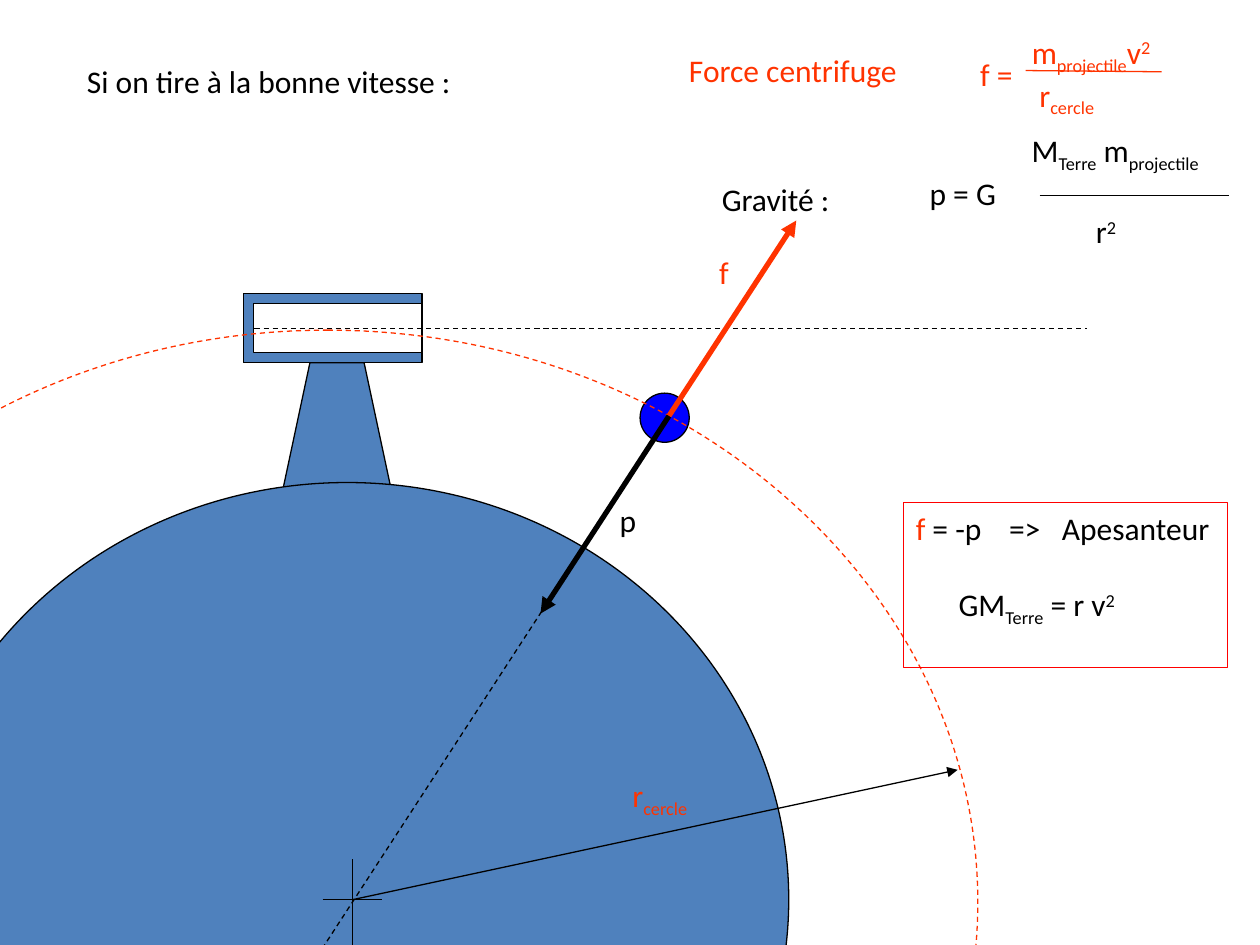
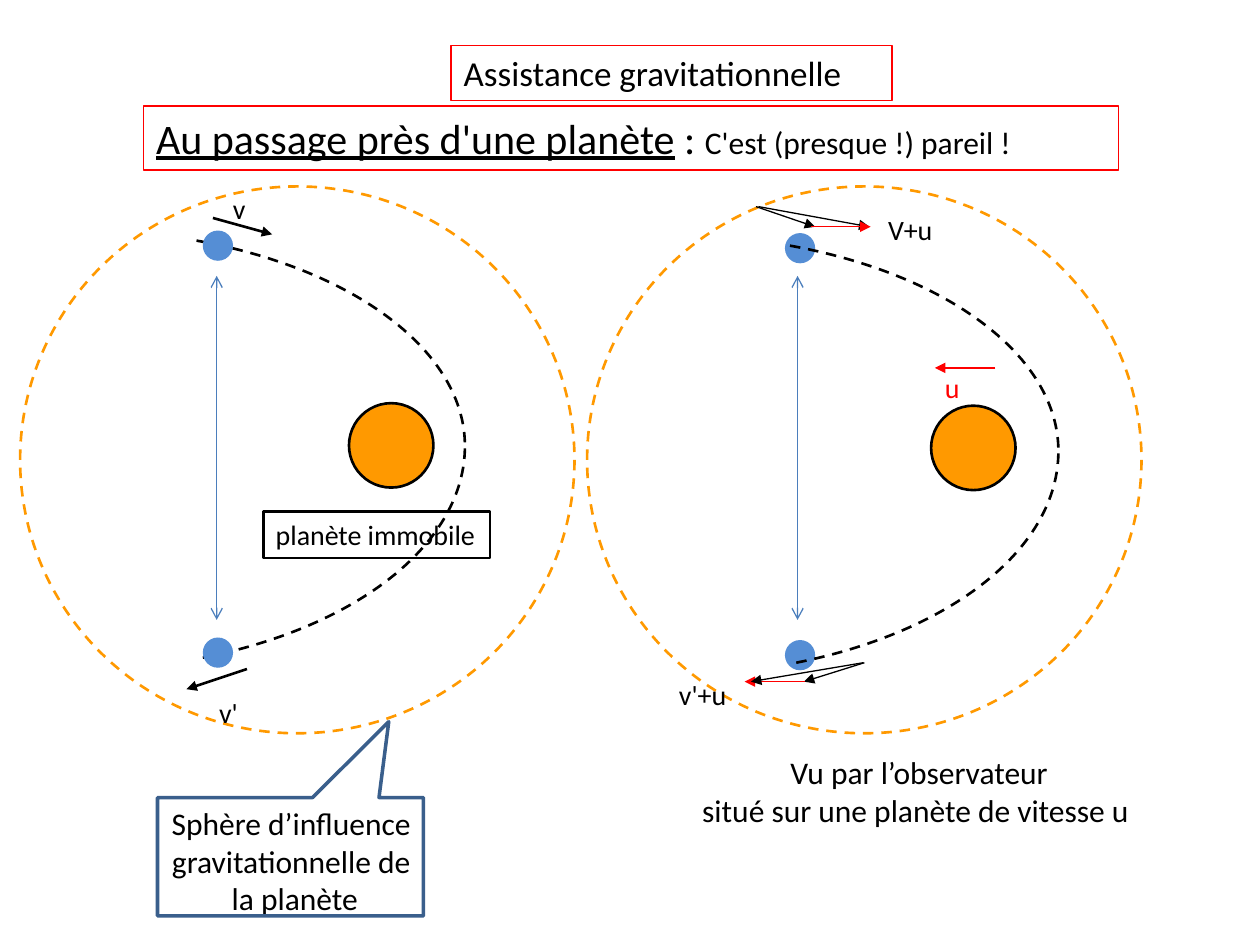
from dataclasses import dataclass

from lxml import etree
from pptx import Presentation
from pptx import util as u
from pptx.dml.color import RGBColor
from pptx.enum import dml, shapes, text
from pptx.oxml.ns import qn


@dataclass(frozen=True)
class Theme:
    font: str = "Calibri"
    black: str = "000000"
    white: str = "FFFFFF"
    earth: str = "4F81BD"
    ball: str = "0000FF"
    force: str = "FF3300"
    red: str = "FF0000"
    orange: str = "FF9900"
    probe: str = "558ED5"
    span: str = "4B7EBC"
    callout: str = "3A5F8C"
    heading: int = 24
    title: int = 20
    body: int = 18
    label: int = 16
    thin: float = 0.75
    medium: float = 1.5
    thick: float = 3


THEME = Theme()
SLIDE_SIZE = (10, 7.5)
BLANK_LINE = 22  # points of space that separate two formula lines
QUARTER = 0.55  # share of the tangent that makes a Bezier quarter ellipse


@dataclass
class Line:
    """A paragraph; each run is a string or a (string, style) pair."""
    runs: list
    indent: float = 0
    before: float = 0
    tabs: tuple = ()


def sub(string):
    return string, {"baseline": -25}


def sup(string):
    return string, {"baseline": 30}


# ---- Slide 1: content, lengths in inches ----
ORBIT_TITLE = "Si on tire à la bonne vitesse :"
CENTRE = (2.8, 7.14)
PROJECTILE = (5.31, 3.3)
ORBIT = (-2.56, 2.62, 10.32, 9.08)
PEDESTAL = [(2.24, 3.91), (2.46, 2.88), (2.89, 2.88), (3.11, 3.91)]

# box, lines, colour
ORBIT_TEXTS = [
    ((5.31, 0.36, 2.08, 0.4), [Line(["Force centrifuge"], indent=0.06)],
     THEME.force),
    ((7.68, 0.39, 0.49, 0.4), [Line(["f ="])], THEME.force),
    ((8.09, 0.21, 1.25, 0.71),
     [Line(["m", sub("projectile"), "v", sup("2")]),
      Line(["r", sub("cercle")], indent=0.06)], THEME.force),
    ((5.63, 1.38, 1.11, 0.37), [Line(["Gravité :"])], THEME.black),
    ((7.28, 1.33, 0.76, 0.37), [Line(["p = G"])], THEME.black),
    ((8.09, 0.99, 1.67, 1.01),
     [Line(["M", sub("Terre"), " m", sub("projectile")]),
      Line(["r", sup("2")], indent=0.51, before=BLANK_LINE)], THEME.black),
    ((4.92, 6.11, 0.69, 0.4), [Line(["r", sub("cercle")])], THEME.force),
    ((5.61, 1.96, 0.27, 0.4), [Line(["f"])], THEME.force),
    ((4.82, 3.93, 0.34, 0.4), [Line(["p"])], THEME.black),
]
WEIGHTLESS_BOX = (7.17, 3.99, 2.57, 1.31)
WEIGHTLESS = [
    Line([("f ", {"color": THEME.force}), "= -p\t=>\tApesanteur"],
         tabs=(0.74, 1.16)),
    Line(["GM", sub("Terre"), " = r v", sup("2")],
         indent=0.34, before=BLANK_LINE),
]
# start, end, colour, width, options
ORBIT_LINES = [
    ((2.4, 7.77), PROJECTILE, THEME.black, THEME.thin, {"dash": True}),
    (PROJECTILE, (4.29, 4.87), THEME.black, THEME.thick, {"tail": "triangle"}),
    (PROJECTILE, (6.32, 1.75), THEME.force, THEME.thick, {"tail": "triangle"}),
    ((2.56, 7.14), (3.03, 7.14), THEME.black, THEME.thin, {}),
    ((2.8, 7.5), (2.8, 6.82), THEME.black, THEME.thin, {}),
    ((8.14, 0.56), (9.22, 0.57), THEME.force, THEME.thin, {}),
    ((8.25, 1.55), (9.75, 1.55), THEME.black, THEME.thin, {}),
    (CENTRE, (7.6, 6.11), THEME.black, THEME.thin, {"tail": "triangle"}),
]

# ---- Slide 2: content ----
ASSIST_TITLE = "Assistance gravitationnelle"
ASSIST_HEADING = Line([
    ("Au passage près d'une planète", {"underline": True}), " : ",
    ("C'est (presque !) pareil !", {"size": THEME.body})])
OBSERVER = [Line(["Vu par l’observateur"]),
            Line(["situé sur une planète de vitesse u "])]
SPHERE_NOTE = [Line(["Sphère d’influence "]), Line(["gravitationnelle de "]),
               Line(["la planète"])]
PANELS = [
    {"sphere": (0.16, 1.48), "probe": (1.61, 1.83), "curve": (0.61, 3.54),
     "span": 1.72, "curve_on_top": False},
    {"sphere": (4.66, 1.48), "probe": (6.23, 1.85), "curve": (5.32, 3.58),
     "span": 6.33, "curve_on_top": True},
]
# Bezier points of the two halves of a flyby, from the centre of its curve
FLYBY_HALVES = [
    [(0.95, -1.63), (2.22, -1.4), (3.08, -0.74), (3.08, 0)],
    [(1, 1.68), (2.25, 1.43), (3.08, 0.76), (3.08, 0)],
]
SPEED_LABELS = [
    ((1.75, 1.47, 0.31, 0.37), "v", THEME.black),
    ((1.64, 5.47, 0.35, 0.37), "v'", THEME.black),
    ((6.95, 1.64, 0.56, 0.37), "V+u", THEME.black),
    ((5.29, 5.33, 0.58, 0.37), "v'+u", THEME.black),
    ((7.4, 2.89, 0.32, 0.37), "u", THEME.red),
]
SPEED_ARROWS = [
    ((1.96, 5.31), (1.48, 5.47), THEME.black, THEME.medium),
    ((1.69, 1.73), (2.16, 1.86), THEME.black, THEME.medium),
    ((6, 1.64), (6.47, 1.8), THEME.black, THEME.thin),
    ((6.02, 1.64), (6.9, 1.8), THEME.black, THEME.thin),
    ((6.44, 1.8), (6.91, 1.8), THEME.red, THEME.thin),
    ((6.86, 5.26), (6.38, 5.41), THEME.black, THEME.thin),
    ((6.39, 5.41), (5.91, 5.41), THEME.red, THEME.thin),
    ((6.85, 5.26), (5.96, 5.41), THEME.black, THEME.thin),
    ((7.9, 2.92), (7.42, 2.92), THEME.red, THEME.thin),
]


# ---- Drawing helpers ----
def inches(values):
    return [u.Inches(value) for value in values]


def style_outline(line, color, width, dash=False):
    line.color.rgb = RGBColor.from_string(color)
    line.width = u.Pt(width)
    if dash:
        line.dash_style = dml.MSO_LINE.DASH


def style_shape(shape, fill=None, outline=None, width=THEME.thin, dash=False):
    shape.shadow.inherit = False
    if fill:
        shape.fill.solid()
        shape.fill.fore_color.rgb = RGBColor.from_string(fill)
    else:
        shape.fill.background()
    if outline:
        style_outline(shape.line, outline, width, dash)
    else:
        shape.line.fill.background()
    return shape


def add_preset(slide, kind, box, **style):
    return style_shape(slide.shapes.add_shape(kind, *inches(box)), **style)


def add_outline(slide, points, closed=True, **style):
    start, *others = [inches(point) for point in points]
    builder = slide.shapes.build_freeform(*start, scale=1.0)
    builder.add_line_segments(others, close=closed)
    return style_shape(builder.convert_to_shape(), **style)


def add_curve(slide, frame, points, **style):
    """Draw a Bezier curve: a start, then three points for each segment."""
    left, top, width, height = frame
    shape = add_outline(slide, [(left, top), (left + width, top + height)],
                        closed=False, **style)
    outline = next(shape._element.iter(qn("a:path")))
    for child in list(outline):
        outline.remove(child)
    for index, (x, y) in enumerate(points):
        if index == 0:
            step = etree.SubElement(outline, qn("a:moveTo"))
        elif index % 3 == 1:
            step = etree.SubElement(outline, qn("a:cubicBezTo"))
        etree.SubElement(step, qn("a:pt"), x=str(u.Inches(x - left)),
                         y=str(u.Inches(y - top)))


def ellipse_points(box):
    """Bezier points of an ellipse, clockwise from its top."""
    left, top, width, height = box
    x, y = left + width / 2, top + height / 2
    ends = [(x, top), (left + width, y), (x, top + height), (left, y), (x, top)]
    points = ends[:1]
    for start, end in zip(ends, ends[1:]):
        corner = (start[0] + end[0] - x, start[1] + end[1] - y)
        points += [tuple(a + QUARTER * (b - a) for a, b in zip(point, corner))
                   for point in (start, end)] + [end]
    return points


def add_line(slide, start, end, color, width, dash=False, head=None, tail=None):
    connector = slide.shapes.add_connector(
        shapes.MSO_CONNECTOR.STRAIGHT, *inches(start + end))
    style_outline(connector.line, color, width, dash)
    outline = connector.line._get_or_add_ln()
    for tag, arrow in (("a:headEnd", head), ("a:tailEnd", tail)):
        if arrow:
            etree.SubElement(outline, qn(tag), type=arrow)
    etree.SubElement(connector._element.spPr, qn("a:effectLst"))


def style_run(run, color=None, size=None, underline=None, baseline=None):
    if color:
        run.font.color.rgb = RGBColor.from_string(color)
    if size:
        run.font.size = u.Pt(size)
    if underline:
        run.font.underline = True
    if baseline:
        run._r.get_or_add_rPr().set("baseline", str(baseline * 1000))


def write(shape, lines, size=THEME.body, color=THEME.black, centred=False):
    frame = shape.text_frame
    frame.word_wrap = True
    frame.auto_size = text.MSO_AUTO_SIZE.NONE
    frame.vertical_anchor = text.MSO_ANCHOR.TOP
    if not centred:
        frame.margin_right = 0
    for index, line in enumerate(lines):
        paragraph = frame.add_paragraph() if index else frame.paragraphs[0]
        properties = paragraph._p.get_or_add_pPr()
        if line.indent:
            properties.set("marL", str(u.Inches(line.indent)))
        if line.tabs:
            stops = etree.SubElement(properties, qn("a:tabLst"))
            for stop in line.tabs:
                etree.SubElement(stops, qn("a:tab"),
                                 pos=str(u.Inches(stop)), algn="l")
        paragraph.alignment = (text.PP_ALIGN.CENTER if centred
                               else text.PP_ALIGN.LEFT)
        if line.before:
            paragraph.space_before = u.Pt(line.before)
        paragraph.font.name = THEME.font
        paragraph.font.size = u.Pt(size)
        paragraph.font.color.rgb = RGBColor.from_string(color)
        for item in line.runs:
            string, style = (item, {}) if isinstance(item, str) else item
            run = paragraph.add_run()
            run.text = string
            style_run(run, **style)


def add_text(slide, box, lines, outline=None, width=THEME.thin, **style):
    shape = slide.shapes.add_textbox(*inches(box))
    if outline:
        style_outline(shape.line, outline, width)
    write(shape, lines, **style)


def add_titled_slide(presentation, title, box, size):
    slide = presentation.slides.add_slide(presentation.slide_layouts[5])
    shape = slide.shapes.title
    shape.left, shape.top, shape.width, shape.height = inches(box)
    write(shape, [Line([title])], size)
    return slide


# ---- Slides ----
def build_orbit_slide(presentation):
    slide = add_titled_slide(presentation, ORBIT_TITLE,
                             (0.59, 0.44, 3.62, 0.37), THEME.body)
    rectangle, oval = shapes.MSO_SHAPE.RECTANGLE, shapes.MSO_SHAPE.OVAL
    for kind, box, fill in [
            (rectangle, (1.93, 2.33, 1.42, 0.55), THEME.earth),
            (rectangle, (2.01, 2.41, 1.34, 0.39), THEME.white),
            (oval, (5.08, 3.12, 0.39, 0.39), THEME.ball)]:
        add_preset(slide, kind, box, fill=fill, outline=THEME.black)
    add_line(slide, (2.02, 2.61), (8.63, 2.61), THEME.black, THEME.thin,
             dash=True)
    add_curve(slide, ORBIT, ellipse_points(ORBIT),
              outline=THEME.force, dash=True)
    add_outline(slide, PEDESTAL, fill=THEME.earth, outline=THEME.black)
    add_preset(slide, oval, (-0.75, 3.83, 7.01, 6.62),
               fill=THEME.earth, outline=THEME.black)
    for start, end, color, width, options in ORBIT_LINES:
        add_line(slide, start, end, color, width, **options)
    for box, lines, color in ORBIT_TEXTS:
        add_text(slide, box, lines, color=color)
    add_text(slide, WEIGHTLESS_BOX, WEIGHTLESS, outline=THEME.red)


def add_flyby(slide, centre):
    x, y = centre
    for half in FLYBY_HALVES:
        rise = half[0][1]
        add_curve(slide, (x, y + min(rise, 0), 3.08, abs(rise)),
                  [(x + across, y + down) for across, down in half],
                  outline=THEME.black, width=THEME.medium, dash=True)


def add_panel(slide, panel):
    oval = shapes.MSO_SHAPE.OVAL
    left, top = panel["probe"]
    add_preset(slide, oval, (left + 1.16, top + 1.37, 0.67, 0.67),
               fill=THEME.orange, outline=THEME.black, width=THEME.medium)
    if not panel["curve_on_top"]:
        add_flyby(slide, panel["curve"])
    for probe_top in (top, top + 3.23):
        add_preset(slide, oval, (left, probe_top, 0.24, 0.24),
                   fill=THEME.probe)
    if panel["curve_on_top"]:
        add_flyby(slide, panel["curve"])
    add_preset(slide, oval, panel["sphere"] + (4.4, 4.34),
               outline=THEME.orange, width=THEME.medium, dash=True)
    add_line(slide, (panel["span"], 2.19), (panel["span"], 4.92),
             THEME.span, THEME.thin, head="arrow", tail="arrow")


def build_assist_slide(presentation):
    slide = add_titled_slide(presentation, ASSIST_TITLE,
                             (3.58, 0.36, 3.5, 0.44), THEME.title)
    style_outline(slide.shapes.title.line, THEME.red, THEME.thin)
    add_text(slide, (1.14, 0.84, 7.74, 0.51), [ASSIST_HEADING],
             outline=THEME.red, size=THEME.heading)
    for panel in PANELS:
        add_panel(slide, panel)
    add_text(slide, (2.09, 4.06, 1.8, 0.37), [Line(["planète immobile"])],
             outline=THEME.black, width=THEME.medium, size=THEME.label)
    for arrow in SPEED_ARROWS:
        add_line(slide, *arrow, tail="triangle")
    for box, label, color in SPEED_LABELS:
        add_text(slide, box, [Line([label])], size=THEME.label, color=color)
    add_text(slide, (5.45, 5.93, 3.69, 0.71), OBSERVER, centred=True)
    add_text(slide, (1.25, 6.33, 2.18, 1.01), SPHERE_NOTE, centred=True)
    callout = add_preset(slide, shapes.MSO_SHAPE.RECTANGULAR_CALLOUT,
                         (1.25, 6.33, 2.11, 0.94),
                         outline=THEME.callout, width=2)
    callout.adjustments[0], callout.adjustments[1] = 0.37, -1.14


def main():
    presentation = Presentation()
    presentation.slide_width, presentation.slide_height = inches(SLIDE_SIZE)
    build_orbit_slide(presentation)
    build_assist_slide(presentation)
    presentation.save("out.pptx")


if __name__ == "__main__":
    main()
